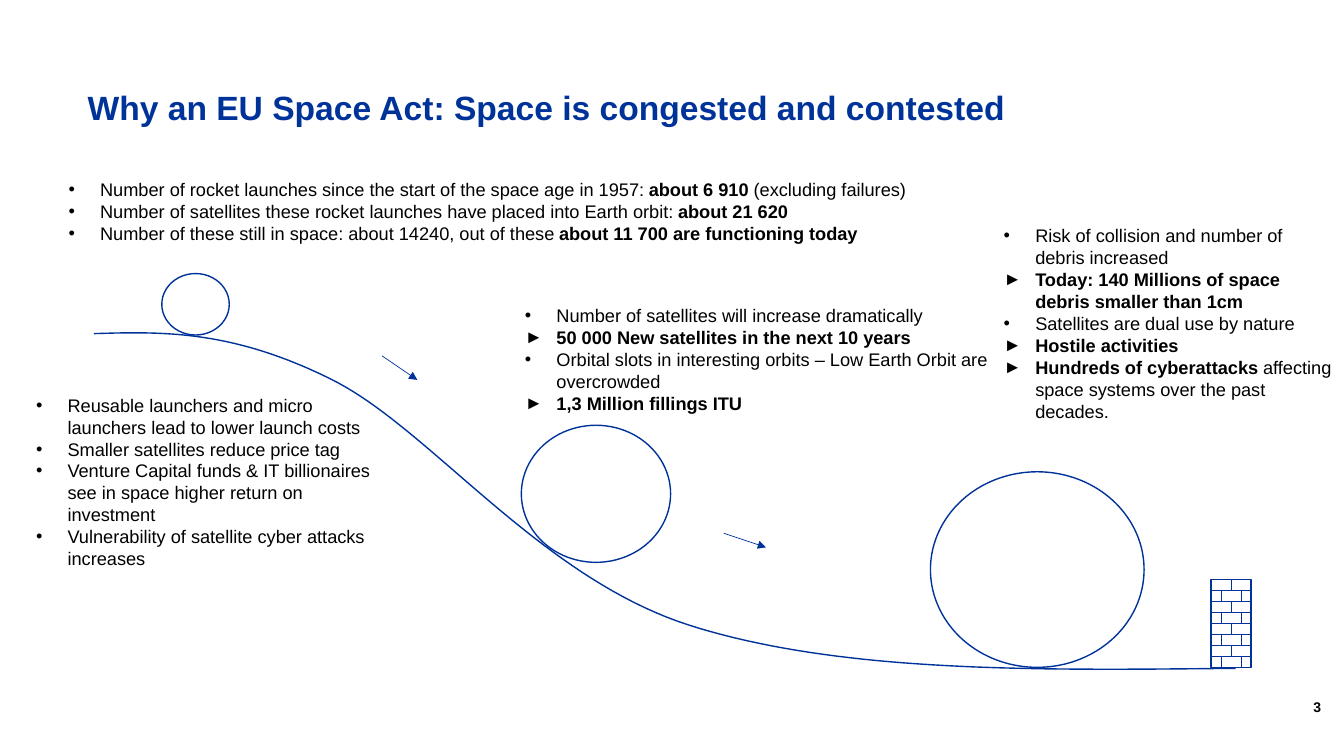
from lxml.etree import SubElement
from pptx import Presentation
from pptx.dml.color import RGBColor as RGB
from pptx.enum.shapes import MSO_CONNECTOR as CONN, MSO_SHAPE as SHAPE
from pptx.enum.text import MSO_ANCHOR as ANCHOR, MSO_AUTO_SIZE as AUTO, PP_ALIGN as ALIGN
from pptx.oxml.ns import qn
from pptx.util import Pt

COLORS = {"blue": "003399", "black": "000000", "white": "FFFFFF"}
BLUE, BLACK, WHITE = (RGB.from_string(c) for c in COLORS.values())
BODY = {"name": "Arial", "size": Pt(13), "bold": False}

prs = Presentation()
prs.slide_width, prs.slide_height = Pt(960), Pt(540)
s = prs.slides.add_slide(prs.slide_layouts[1])


def fill_text(sp, box, paragraphs, color=BLACK, font=BODY):
    """Place a text shape; each paragraph is (bullet, [(text, bold), ...])."""
    sp.left, sp.top, sp.width, sp.height = map(Pt, box)
    tf = sp.text_frame
    tf.word_wrap = True
    for i, (bullet, runs) in enumerate(paragraphs):
        p = tf.paragraphs[0] if i == 0 else tf.add_paragraph()
        p.alignment = ALIGN.LEFT
        if bullet:
            pPr = p._p.get_or_add_pPr()
            pPr.set("marL", str(Pt(22.5)))
            pPr.set("indent", str(-Pt(22.5)))
            SubElement(pPr, qn("a:buFont")).set("typeface", "Arial")
            SubElement(pPr, qn("a:buChar")).set("char", bullet)
            p.line_spacing = Pt(15.65)
            p.space_before = Pt(0)
        for text, bold in runs:
            r = p.add_run()
            r.text = text
            for key, value in {**font, "bold": bold}.items():
                setattr(r.font, key, value)
            r.font.color.rgb = color
    return tf


def add_line(x1, y1, x2, y2, arrow=False):
    ln = s.shapes.add_connector(CONN.STRAIGHT, Pt(x1), Pt(y1), Pt(x2), Pt(y2))
    ln.line.color.rgb = BLUE
    ln.line.width = Pt(0.5)
    if arrow:
        SubElement(ln.line._get_or_add_ln(), qn("a:tailEnd")).set("type", "triangle")
    SubElement(ln._element.spPr, qn("a:effectLst"))
    return ln


# Title
title = s.shapes.title
title.fill.solid()
title.fill.fore_color.rgb = WHITE
tf = fill_text(title, (55.4, 46.1, 838.8, 64.1),
               [(None, [("Why an EU\u00a0Space Act: Space is congested and contested", True)])],
               BLUE, {**BODY, "size": Pt(24)})
tf.vertical_anchor = ANCHOR.MIDDLE
tf.paragraphs[0].line_spacing = 0.9

# Slope, from the top left down to the wall
SLOPE = [((67, 238.3), (115.9, 236.9), (164.9, 235.4), (236.2, 270.7)),
         ((236.2, 270.7), (306.7, 305.3), (384.5, 411.8), (491.8, 446.4)),
         ((491.8, 446.4), (599.8, 481), (741.6, 478.8), (882.7, 477.4))]
STEPS = 40
points = []
for a, b, c, d in SLOPE:
    for t in (k / STEPS for k in range(1, STEPS + 1)):
        weights = ((1 - t) ** 3, 3 * t * (1 - t) ** 2, 3 * t * t * (1 - t), t ** 3)
        points.append(tuple(100 * sum(w * q[axis] for w, q in zip(weights, (a, b, c, d)))
                            for axis in (0, 1)))
fb = s.shapes.build_freeform(6700, 23830, scale=Pt(1) / 100)
fb.add_line_segments(points, close=False)
outlines = [fb.convert_to_shape()]

# Growing balls and the wall
for kind, *box in [(SHAPE.OVAL, 115.6, 195.4, 48.2, 43.9),
                   (SHAPE.OVAL, 372.4, 303.8, 106.6, 97.9),
                   (SHAPE.OVAL, 664.6, 337, 152.6, 139.7),
                   (SHAPE.RECTANGLE, 864.9, 414, 28.8, 62.8)]:
    outlines.append(s.shapes.add_shape(kind, *map(Pt, box)))
for sp in outlines:
    sp.fill.background()
    sp.line.color.rgb = BLUE
    sp.line.width = Pt(1)
    sp.shadow.inherit = False
wall = outlines[-1]

# Bricks: one joint in even rows, two in odd rows
ROWS = 8
left, top, width, row_h = wall.left.pt, wall.top.pt, wall.width.pt, wall.height.pt / ROWS
for row in range(ROWS):
    y = top + row * row_h
    if row:
        bed = add_line(left, y, left + width, y)
        if row == ROWS // 2:
            bed.begin_connect(wall, 1)
            bed.end_connect(wall, 3)
    for share in (0.25, 0.75) if row % 2 else (0.5,):
        x = left + share * width
        joint = add_line(x, y, x, y + row_h)
        if row == 0:
            joint.begin_connect(wall, 0)

# Direction arrows
add_line(272.9, 254.2, 298.1, 271.4, arrow=True)
add_line(517, 380.9, 547.2, 391, arrow=True)

# Lists: key figures in the body, then one beside each ball
LISTS = [
    ((41.8, 123.8, 660.2, 54.7), [
        ("•", [("Number of rocket launches since the start of the space age in 1957: ", False),
               ("about 6 910 ", True), ("(excluding failures)", False)]),
        ("•", [("Number of satellites these rocket launches have placed into Earth orbit: ", False),
               ("about 21 620", True)]),
        ("•", [("Number of these still in space: about 14240, out of these ", False),
               ("about 11 700 are functioning today", True)])]),
    ((18.7, 277.9, 254.2, 149), [
        ("•", [("Reusable launchers and micro launchers lead to lower launch costs", False)]),
        ("•", [("Smaller satellites reduce price tag", False)]),
        ("•", [("Venture Capital funds & IT billionaires see in space higher return on investment",
                False)]),
        ("•", [("Vulnerability of satellite cyber attacks increases", False)])]),
    ((367.9, 213.8, 373, 85.7), [
        ("•", [("Number of satellites will increase dramatically", False)]),
        ("►", [("50 000 New satellites in the next 10 years", True)]),
        ("•", [("Orbital slots in interesting orbits – Low Earth Orbit are overcrowded", False)]),
        ("►", [("1,3 Million fillings ITU", True)])]),
    ((709.9, 157, 249.8, 149), [
        ("•", [("Risk of collision and number of debris increased", False)]),
        ("►", [("Today: 140 Millions of space debris smaller than 1cm", True)]),
        ("•", [("Satellites are dual use by nature", False)]),
        ("►", [("Hostile activities", True)]),
        ("►", [("Hundreds of cyberattacks ", True),
               ("affecting space systems over the past decades.", False)])]),
]
for i, (box, paragraphs) in enumerate(LISTS):
    sp = s.shapes.add_textbox(0, 0, 0, 0) if i else s.placeholders[1]
    fill_text(sp, box, paragraphs).auto_size = AUTO.SHAPE_TO_FIT_TEXT

# Slide number
tf = fill_text(s.shapes.add_textbox(0, 0, 0, 0), (931, 486, 29, 28.8),
               [(None, [("3", True)])], font={**BODY, "size": Pt(10)})
tf.vertical_anchor = ANCHOR.BOTTOM

prs.save("out.pptx")
